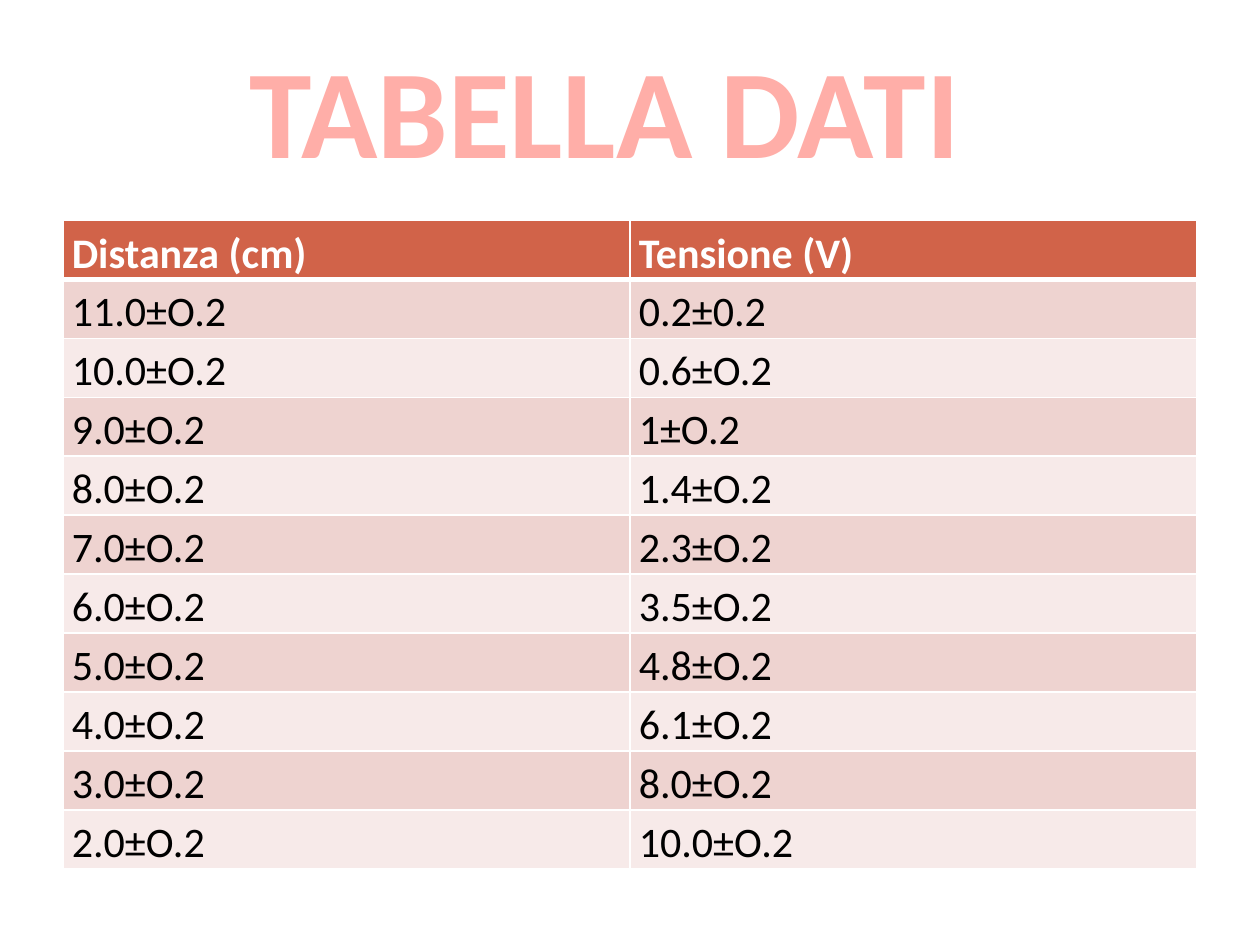
from lxml import etree
from pptx import Presentation
from pptx.dml.color import RGBColor
from pptx.enum import text
from pptx.oxml.ns import qn
from pptx.util import Inches, Pt

TITLE = "TABELLA DATI"
HEADER = ("Distanza (cm)", "Tensione (V)")
READINGS = [
    ("11.0±O.2", "0.2±0.2"),
    ("10.0±O.2", "0.6±O.2"),
    ("9.0±O.2", "1±O.2"),
    ("8.0±O.2", "1.4±O.2"),
    ("7.0±O.2", "2.3±O.2"),
    ("6.0±O.2", "3.5±O.2"),
    ("5.0±O.2", "4.8±O.2"),
    ("4.0±O.2", "6.1±O.2"),
    ("3.0±O.2", "8.0±O.2"),
    ("2.0±O.2", "10.0±O.2"),
]

FONT = "Calibri"
WHITE = RGBColor(0xFF, 0xFF, 0xFF)
BLACK = RGBColor(0x00, 0x00, 0x00)
PINK = RGBColor(0xFF, 0xAE, 0xA8)
RUST = RGBColor(0xD1, 0x63, 0x49)
BANDS = (RGBColor(0xEE, 0xD3, 0xD0), RGBColor(0xF7, 0xEA, 0xE9))
HEADER_H, ROW_H, COL_W = 0.27, 0.41, 4.5


def style_run(p, size, color, bold):
    font = p.runs[0].font
    font.name, font.size, font.bold = FONT, Pt(size), bold
    font.color.rgb = color


def add_borders(cell, top, bottom):
    tcPr = cell._tc.get_or_add_tcPr()
    for side, width in (("L", 1), ("R", 1), ("T", top), ("B", bottom)):
        ln = etree.SubElement(tcPr, qn(f"a:ln{side}"), w=str(Pt(width)))
        fill = etree.SubElement(ln, qn("a:solidFill"))
        etree.SubElement(fill, qn("a:srgbClr"), val=str(WHITE))


def add_title(s):
    tf = s.shapes.add_textbox(Inches(1.61), Inches(0.21), Inches(6.38), Inches(1.31)).text_frame
    tf.word_wrap = True
    tf.text = TITLE
    p = tf.paragraphs[0]
    p.alignment = text.PP_ALIGN.CENTER
    style_run(p, 72, PINK, True)


def add_readings(s):
    rows = [HEADER] + READINGS
    height = HEADER_H + ROW_H * len(READINGS)
    table = s.shapes.add_table(len(rows), len(HEADER), Inches(0.5), Inches(1.75),
                               Inches(COL_W * len(HEADER)), Inches(height)).table
    for i, values in enumerate(rows):
        head = i == 0
        table.rows[i].height = Inches(HEADER_H if head else ROW_H)
        for j, value in enumerate(values):
            cell = table.cell(i, j)
            cell.margin_left = cell.margin_right = Inches(0.07)
            cell.margin_top = cell.margin_bottom = 0
            add_borders(cell, 3 if i == 1 else 1, 3 if head else 1)
            cell.fill.solid()
            cell.fill.fore_color.rgb = RUST if head else BANDS[(i - 1) % 2]
            cell.text_frame.text = value
            p = cell.text_frame.paragraphs[0]
            p.line_spacing = 1.15
            style_run(p, 24, WHITE if head else BLACK, head)


def main():
    prs = Presentation()
    prs.slide_width, prs.slide_height = Inches(10), Inches(7.5)
    s = prs.slides.add_slide(prs.slide_layouts[6])
    add_readings(s)
    add_title(s)
    prs.save("out.pptx")


if __name__ == "__main__":
    main()
